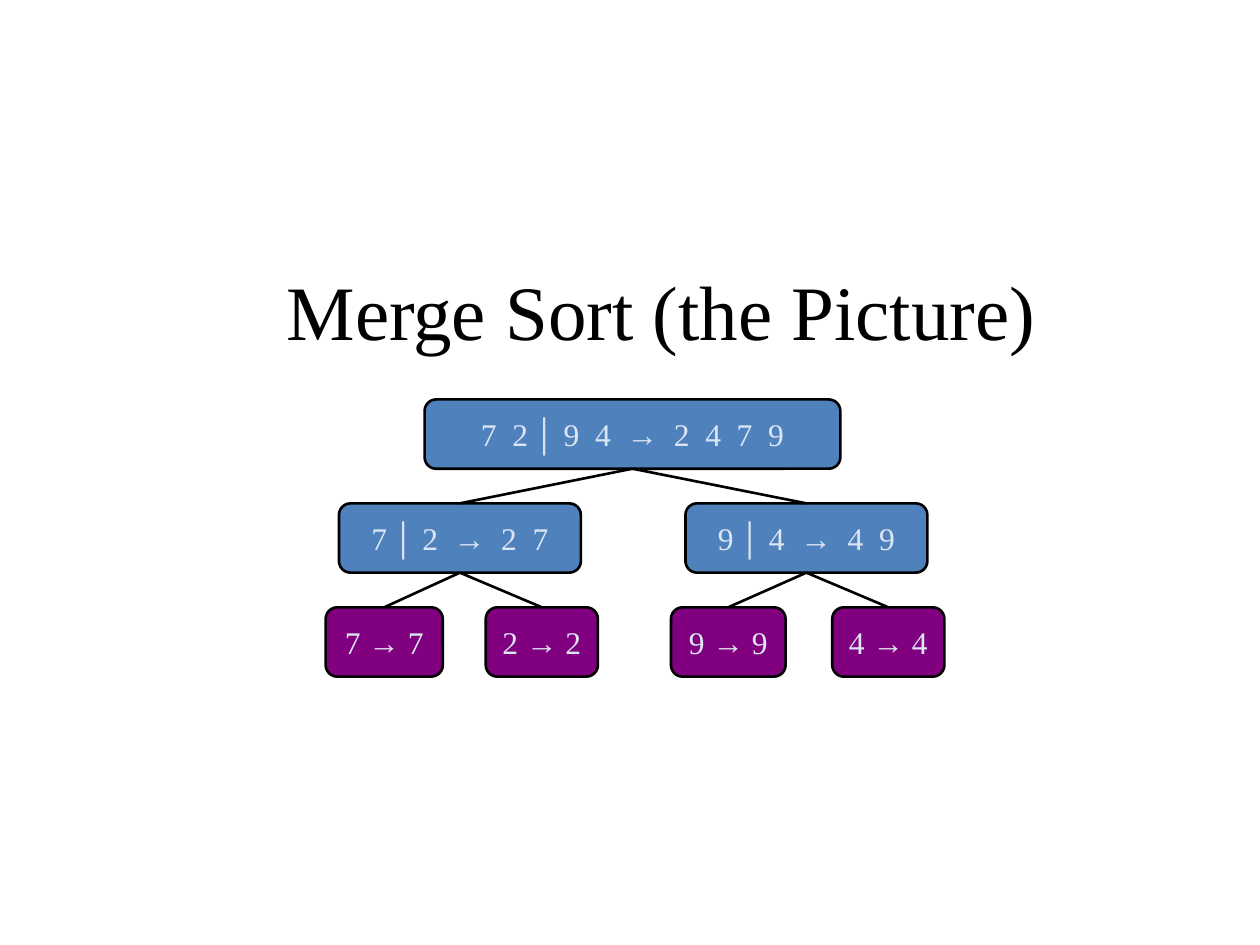
from itertools import groupby

from lxml import etree
from pptx import Presentation
from pptx import util as u
from pptx.dml.color import RGBColor
from pptx.enum import shapes, text
from pptx.oxml.ns import qn

COLORS = {"ink": "000000", "split": "4F81BD", "leaf": "800080", "label": "DCE6F2"}
SERIF, SANS = "Times New Roman", "Arial"
TOP, STEP, HIGH = 3.17, 0.825, 0.55
BOTTOM_SIDE, TOP_SIDE = 2, 0

# Each node: centre, width, label, children
TREE = (5.02, 3.3, "7  2 │ 9  4  →  2  4  7  9", [
    (3.65, 1.92, "7 │ 2  →  2  7", [
        (3.05, 0.93, "7 → 7", []),
        (4.3, 0.89, "2 → 2", []),
    ]),
    (6.4, 1.92, "9 │ 4  →  4  9", [
        (5.78, 0.91, "9 → 9", []),
        (7.05, 0.89, "4 → 4", []),
    ]),
])


class Deck:
    """Holds the style and the current slide."""

    def __init__(self):
        self.prs = Presentation()
        self.prs.slide_width = u.Inches(10)
        self.prs.slide_height = u.Inches(7.5)
        self.slide = self.prs.slides.add_slide(self.prs.slide_layouts[6])

    def color(self, name):
        return RGBColor.from_string(COLORS[name])

    def label(self, frame, words, size, color):
        """Centre the words, with split bars and arrows as bold runs."""
        frame.vertical_anchor = text.MSO_ANCHOR.MIDDLE
        para = frame.paragraphs[0]
        para.alignment = text.PP_ALIGN.CENTER
        for mark, chars in groupby(words, lambda c: c if c in "│→" else ""):
            run = para.add_run()
            run.text = "".join(chars)
            run.font.name = SANS if mark == "│" else SERIF
            run.font.bold = bool(mark)
            run.font.size = u.Pt(size)
            run.font.color.rgb = self.color(color)

    def title(self, words, left, top, width, height):
        box = self.slide.shapes.add_textbox(*map(u.Inches, (left, top, width, height)))
        box.text_frame.word_wrap = True
        self.label(box.text_frame, words, 44, "ink")

    def box(self, mid, top, width, words, fill):
        box = self.slide.shapes.add_shape(
            shapes.MSO_SHAPE.ROUNDED_RECTANGLE,
            *map(u.Inches, (mid - width / 2, top, width, HIGH)))
        box.adjustments[0] = 0.167
        box.shadow.inherit = False
        box.fill.solid()
        box.fill.fore_color.rgb = self.color(fill)
        box.line.color.rgb = self.color("ink")
        box.line.width = u.Pt(1.5)
        box.text_frame.word_wrap = False
        self.label(box.text_frame, words, 18, "label")
        return box

    def link(self, upper, lower):
        line = self.slide.shapes.add_connector(shapes.MSO_CONNECTOR.STRAIGHT, 0, 0, 0, 0)
        line.begin_connect(upper, BOTTOM_SIDE)
        line.end_connect(lower, TOP_SIDE)
        line.line.color.rgb = self.color("ink")
        line.line.width = u.Pt(1.5)
        etree.SubElement(line._element.spPr, qn("a:effectLst"))

    def tree(self, node, level=0):
        """Draw a node and all below it; return the node's box."""
        mid, width, words, kids = node
        fill = "split" if kids else "leaf"
        box = self.box(mid, TOP + level * STEP, width, words, fill)
        for kid in kids:
            self.link(box, self.tree(kid, level + 1))
        return box


def main():
    deck = Deck()
    deck.title("Merge Sort (the Picture)", 1, 1.83, 8.5, 1.25)
    deck.tree(TREE)
    deck.prs.save("out.pptx")


if __name__ == "__main__":
    main()
